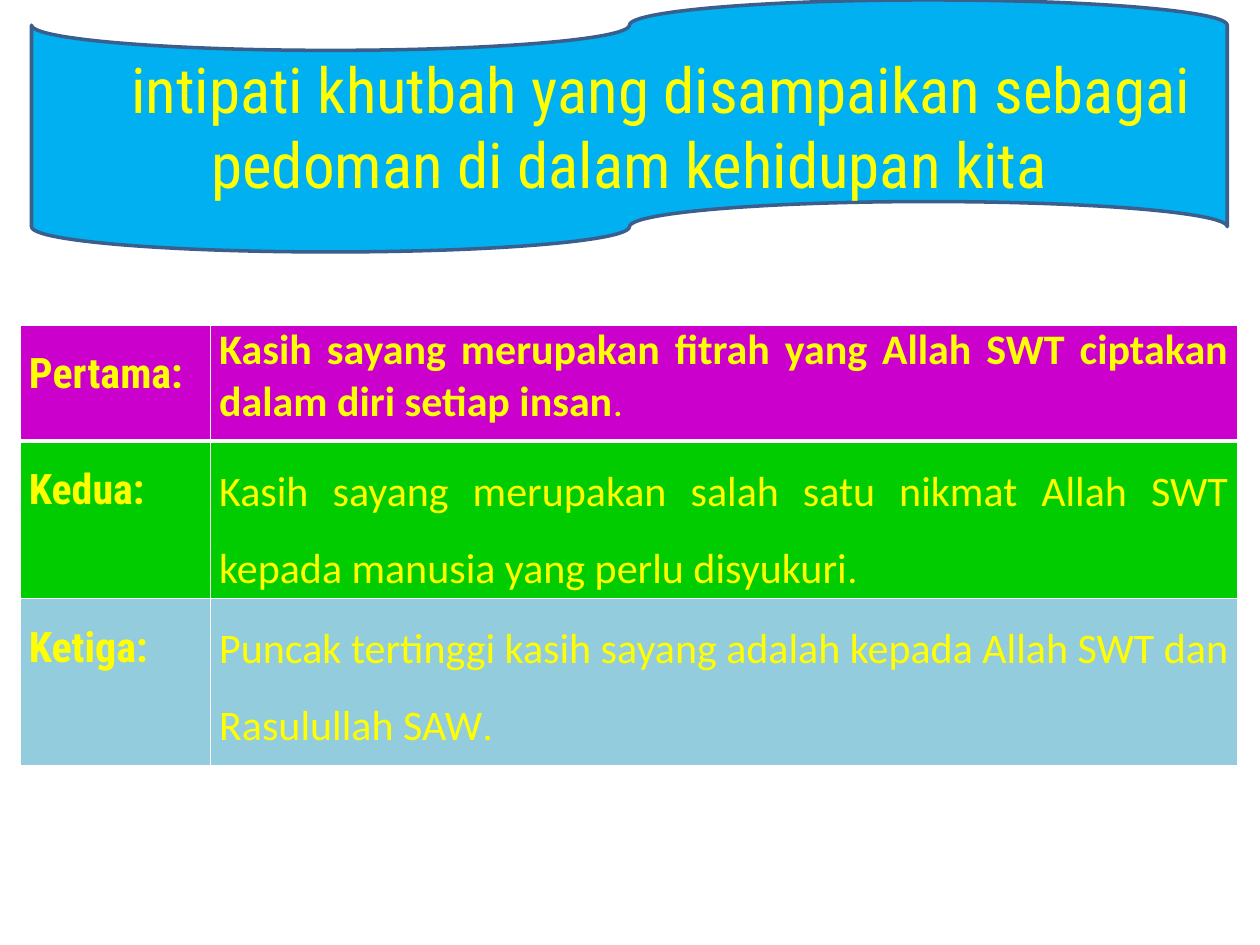
from lxml import etree
from pptx import Presentation
from pptx.dml.color import RGBColor
from pptx.enum import shapes, text
from pptx.oxml import ns
from pptx.util import Inches, Pt

YELLOW = RGBColor(0xFF, 0xFF, 0x00)
WHITE = RGBColor(0xFF, 0xFF, 0xFF)
SKY = RGBColor(0x00, 0xB0, 0xF0)
NAVY = RGBColor(0x3A, 0x5F, 0x8C)
PURPLE = RGBColor(0xCC, 0x00, 0xCC)
GREEN = RGBColor(0x00, 0xCC, 0x00)
PALE_BLUE = RGBColor(0x93, 0xCD, 0xDD)

HEADING_FONT = "Roboto Condensed"
BODY_FONT = "Calibri"

TITLE = "intipati khutbah yang disampaikan sebagai pedoman di dalam kehidupan kita"
COLUMN_WIDTHS = (1.51, 8.15)
# label, message, fill, row height, message is bold, message line spacing
POINTS = (
    ("Pertama:", "Kasih sayang merupakan fitrah yang Allah SWT ciptakan dalam diri setiap insan",
     PURPLE, 0.92, True, 1.0),
    ("Kedua:", "Kasih sayang merupakan salah satu nikmat Allah SWT kepada manusia yang perlu disyukuri",
     GREEN, 1.25, False, 1.5),
    ("Ketiga:", "Puncak tertinggi kasih sayang adalah kepada Allah SWT dan Rasulullah SAW",
     PALE_BLUE, 1.33, False, 1.5),
)


def add_span(para, words, font_name, size, bold=False):
    span = para.add_run()
    span.text = words
    span.font.name = font_name
    span.font.size = Pt(size)
    span.font.bold = bold
    span.font.color.rgb = YELLOW


def set_borders(cell, widths):
    """Draw white borders; widths are points for left, right, top, bottom."""
    properties = cell._tc.get_or_add_tcPr()
    for index, (side, width) in enumerate(zip("LRTB", widths)):
        line = etree.Element(ns.qn(f"a:ln{side}"), w=str(Pt(width)))
        fill = etree.SubElement(line, ns.qn("a:solidFill"))
        etree.SubElement(fill, ns.qn("a:srgbClr"), val=str(WHITE))
        properties.insert(index, line)


def format_cell(cell, color, spacing, borders):
    """Style a cell and return its empty paragraph."""
    cell.fill.solid()
    cell.fill.fore_color.rgb = color
    cell.margin_left = cell.margin_right = Inches(0.07)
    cell.margin_top = cell.margin_bottom = 0
    set_borders(cell, borders)
    para = cell.text_frame.paragraphs[0]
    para.alignment = text.PP_ALIGN.JUSTIFY
    para.line_spacing = spacing
    return para


def add_points_table(page, left, top, width, height):
    table = page.shapes.add_table(
        len(POINTS), len(COLUMN_WIDTHS), left, top, width, height).table
    for column, column_width in zip(table.columns, COLUMN_WIDTHS):
        column.width = Inches(column_width)
    for index, (label, message, color, row_height, bold, spacing) in enumerate(POINTS):
        table.rows[index].height = Inches(row_height)
        borders = (1, 1, 3 if index == 1 else 1, 3 if index == 0 else 1)
        para = format_cell(table.cell(index, 0), color, 1.5, borders)
        add_span(para, label, HEADING_FONT, 24, bold=True)
        para = format_cell(table.cell(index, 1), color, spacing, borders)
        add_span(para, message, BODY_FONT, 24, bold)
        add_span(para, ".", HEADING_FONT, 24)


def add_banner(page, left, top, width, height):
    banner = page.shapes.add_shape(
        shapes.MSO_SHAPE.FLOWCHART_PUNCHED_TAPE, left, top, width, height)
    banner.shadow.inherit = False
    banner.fill.solid()
    banner.fill.fore_color.rgb = SKY
    banner.line.color.rgb = NAVY
    banner.line.width = Pt(2)
    frame = banner.text_frame
    frame.word_wrap = True
    frame.vertical_anchor = text.MSO_ANCHOR.MIDDLE
    para = frame.paragraphs[0]
    para.alignment = text.PP_ALIGN.CENTER
    properties = para._p.get_or_add_pPr()
    properties.set("marL", "0")
    properties.set("indent", str(Inches(0.5)))
    add_span(para, TITLE, HEADING_FONT, 36)


def main():
    deck = Presentation()
    deck.slide_width, deck.slide_height = Inches(10), Inches(7.5)
    page = deck.slides.add_slide(deck.slide_layouts[6])
    add_points_table(page, Inches(0.16), Inches(2.58), Inches(9.66), Inches(3.5))
    add_banner(page, Inches(0.25), Inches(0), Inches(9.49), Inches(2))
    deck.save("out.pptx")


if __name__ == "__main__":
    main()
